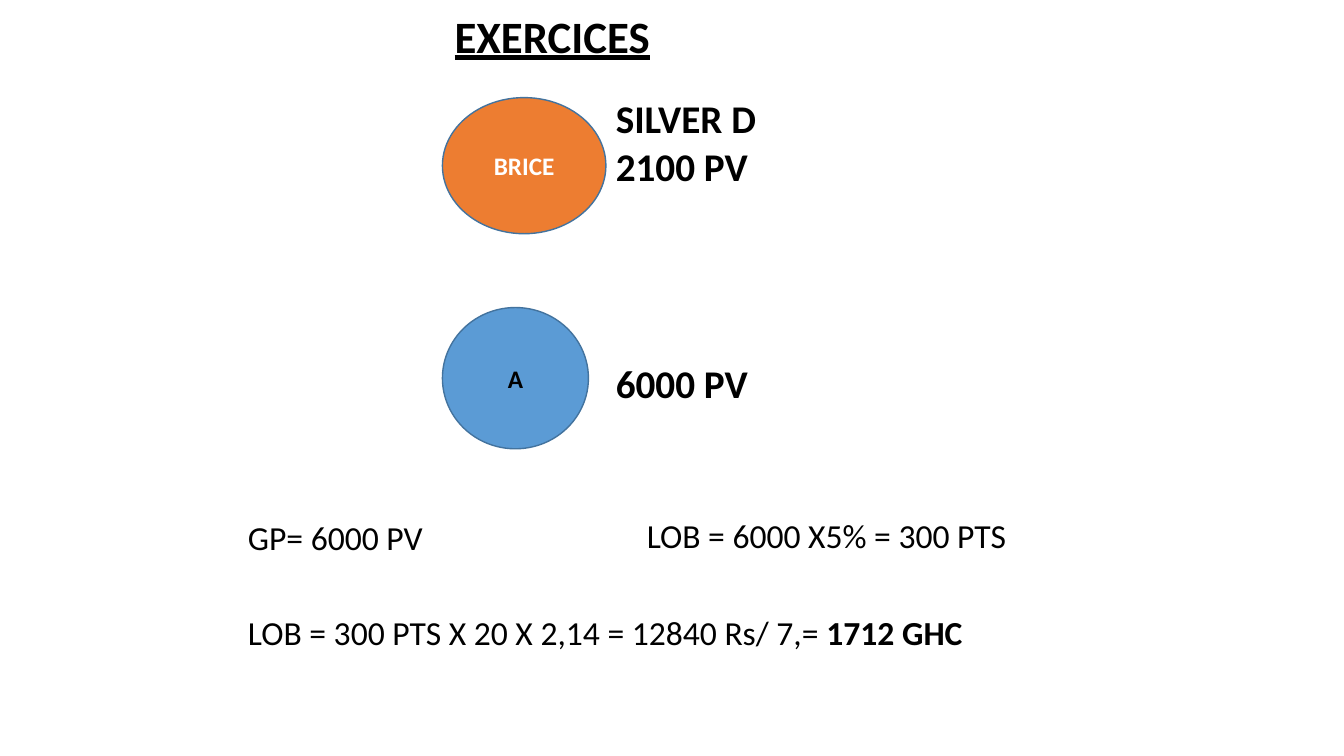
from dataclasses import dataclass
from typing import Any

from pptx import Presentation
from pptx.dml.color import RGBColor
from pptx.enum import shapes, text
from pptx.util import Cm, Pt


@dataclass(frozen=True)
class Theme:
    font: str = "Calibri"
    black: str = "000000"
    white: str = "FFFFFF"
    orange: str = "ED7D31"
    blue: str = "5B9BD5"
    outline: str = "43739E"
    title_size: int = 32
    value_size: int = 28
    formula_size: int = 24
    member_size: int = 18


@dataclass(frozen=True)
class Member:
    name: str
    top: float
    width: float
    height: float
    fill: str
    color: str


@dataclass(frozen=True)
class Label:
    words: str
    left: float
    top: float
    width: float
    height: float
    size: int
    bold: bool = False
    result: str = ""


THEME = Theme()
MEMBER_LEFT = 11.15
VALUE_LEFT = 15.27
FORMULA_LEFT = 6.0

MEMBERS = [
    Member("BRICE", 2.46, 4.12, 3.43, THEME.orange, THEME.white),
    Member("A", 7.75, 3.68, 3.56, THEME.blue, THEME.black),
]
VALUES = [
    Label(words, VALUE_LEFT, top, 6.43, 1.45, THEME.value_size, bold=True)
    for words, top in [("SILVER D", 2.24), ("2100 PV", 3.45), ("6000 PV", 8.94)]
]
FORMULAS = [
    Label(words, left, top, width, 1.27, THEME.formula_size, result=result)
    for words, left, top, width, result in [
        ("GP= 6000 PV", FORMULA_LEFT, 12.9, 9.5, ""),
        ("LOB = 6000 X5% = 300 PTS", 16.05, 12.85, 17.0, ""),
        ("LOB = 300 PTS X 20 X 2,14 = 12840 Rs/ 7,= ", FORMULA_LEFT, 15.29, 20.1, "1712 GHC"),
    ]
]


def add_text(p: Any, words: str, *, size: int, color: str = THEME.black,
             bold: bool = False, underline: bool = False) -> None:
    r = p.add_run()
    r.text = words
    r.font.name = THEME.font
    r.font.size = Pt(size)
    r.font.bold = bold
    r.font.underline = underline
    r.font.color.rgb = RGBColor.from_string(color)


def add_title(slide: Any, words: str) -> None:
    sp = slide.shapes.title
    sp.left, sp.top, sp.width, sp.height = Cm(11.2), Cm(0.08), Cm(14.3), Cm(1.63)
    tf = sp.text_frame
    tf.auto_size = text.MSO_AUTO_SIZE.NONE
    tf.vertical_anchor = text.MSO_ANCHOR.TOP
    p = tf.paragraphs[0]
    p.alignment = text.PP_ALIGN.LEFT
    add_text(p, words, size=THEME.title_size, bold=True, underline=True)


def add_member(slide: Any, member: Member) -> None:
    sp = slide.shapes.add_shape(
        shapes.MSO_SHAPE.OVAL, Cm(MEMBER_LEFT), Cm(member.top),
        Cm(member.width), Cm(member.height))
    sp.shadow.inherit = False
    sp.fill.solid()
    sp.fill.fore_color.rgb = RGBColor.from_string(member.fill)
    sp.line.color.rgb = RGBColor.from_string(THEME.outline)
    sp.line.width = Pt(1)
    tf = sp.text_frame
    tf.vertical_anchor = text.MSO_ANCHOR.MIDDLE
    p = tf.paragraphs[0]
    p.alignment = text.PP_ALIGN.CENTER
    add_text(p, member.name, size=THEME.member_size, color=member.color, bold=True)


def add_label(slide: Any, label: Label) -> None:
    sp = slide.shapes.add_textbox(
        Cm(label.left), Cm(label.top), Cm(label.width), Cm(label.height))
    tf = sp.text_frame
    tf.word_wrap = True
    tf.auto_size = text.MSO_AUTO_SIZE.SHAPE_TO_FIT_TEXT
    p = tf.paragraphs[0]
    add_text(p, label.words, size=label.size, bold=label.bold)
    if label.result:
        add_text(p, label.result, size=label.size, bold=True)


def main() -> None:
    prs = Presentation()
    prs.slide_width, prs.slide_height = Cm(33.87), Cm(19.05)
    slide = prs.slides.add_slide(prs.slide_layouts.get_by_name("Title Only"))
    add_title(slide, "EXERCICES")
    for member in MEMBERS:
        add_member(slide, member)
    for label in VALUES + FORMULAS:
        add_label(slide, label)
    prs.save("out.pptx")


if __name__ == "__main__":
    main()
